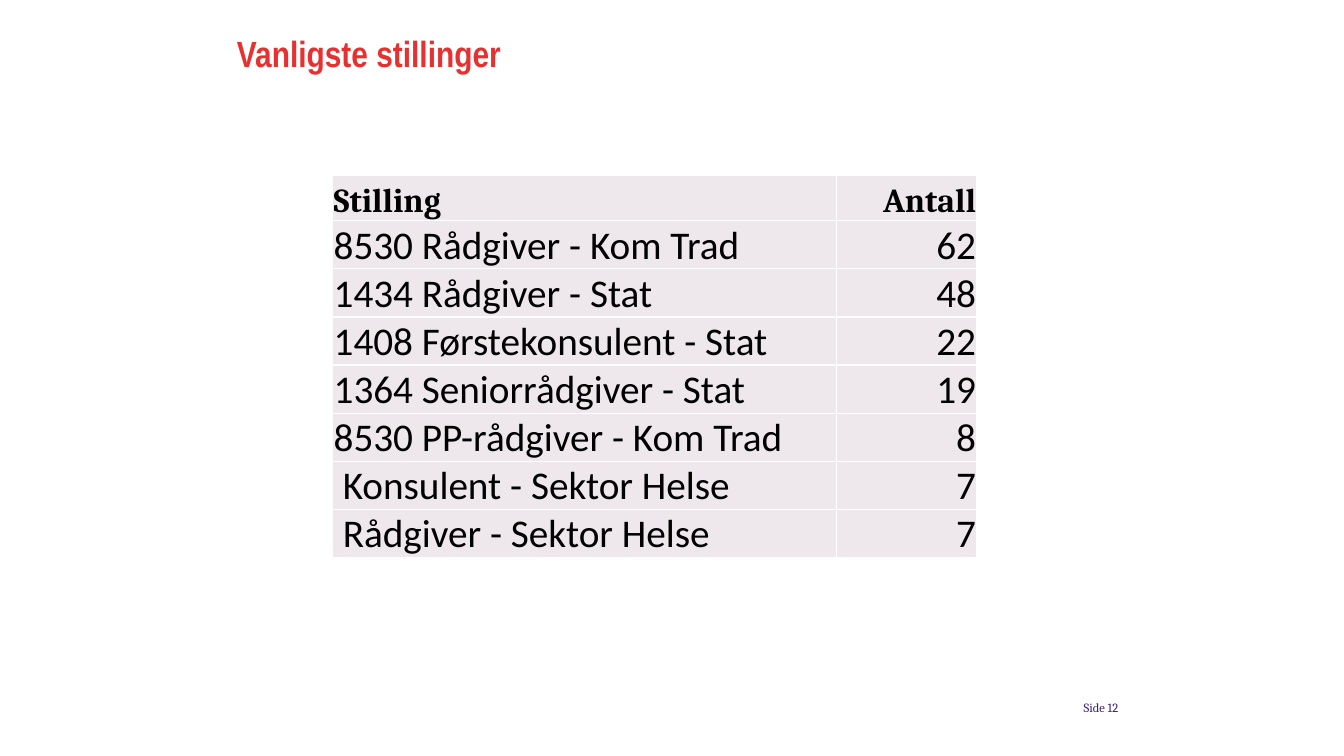
from lxml import etree
from pptx import Presentation
from pptx.dml.color import RGBColor
from pptx.enum.text import MSO_ANCHOR, PP_ALIGN
from pptx.oxml.ns import qn
from pptx.util import Inches, Pt

LEFT, RIGHT = PP_ALIGN.LEFT, PP_ALIGN.RIGHT
TOP, MIDDLE, BOTTOM = MSO_ANCHOR.TOP, MSO_ANCHOR.MIDDLE, MSO_ANCHOR.BOTTOM
BLACK, WHITE, RED, PURPLE, PALE = "000000", "FFFFFF", "E73130", "3F1F71", "EEE8ED"


def style(para, font, size, color, bold=False, align=LEFT):
    para.alignment = align
    for run in para.runs:
        run.font.name = font
        run.font.size = Pt(size)
        run.font.bold = bold
        run.font.color.rgb = RGBColor.from_string(color)


def label(text, left, top, width, height, anchor):
    """Add a text box without margins and return its paragraph."""
    box = slide.shapes.add_textbox(*map(Inches, (left, top, width, height)))
    frame = box.text_frame
    frame.word_wrap = True
    frame.vertical_anchor = anchor
    frame.margin_left = frame.margin_right = 0
    frame.margin_top = frame.margin_bottom = 0
    frame.text = text
    return frame.paragraphs[0]


prs = Presentation()
prs.slide_width, prs.slide_height = Inches(13.33), Inches(7.5)
slide = prs.slides.add_slide(prs.slide_layouts[6])

title = label("Vanligste stillinger", 2.35, 0.34, 6.47, 0.81, TOP)
title.line_spacing = Pt(29)
style(title, "Arial Narrow", 26, RED, bold=True)

# Position, count and left indent in inches
rows = [
    ("Stilling", "Antall", 0.01),
    ("8530 Rådgiver - Kom Trad", "62", 0.01),
    ("1434 Rådgiver - Stat", "48", 0.01),
    ("1408 Førstekonsulent - Stat", "22", 0.01),
    ("1364 Seniorrådgiver - Stat", "19", 0.01),
    ("8530 PP-rådgiver - Kom Trad", "8", 0.01),
    ("Konsulent - Sektor Helse", "7", 0.1),
    ("Rådgiver - Sektor Helse", "7", 0.1),
]
widths = (5, 1.39)
height = 0.45
table = slide.shapes.add_table(
    len(rows), len(widths), Inches(3.3), Inches(1.74),
    Inches(sum(widths)), Inches(height * len(rows))).table
table.horz_banding = False
for col, width in zip(table.columns, widths):
    col.width = Inches(width)

for r, (job, count, indent) in enumerate(rows):
    table.rows[r].height = Inches(height)
    for c, text in enumerate((job, count)):
        cell = table.cell(r, c)
        cell.text = text
        cell.vertical_anchor = BOTTOM
        cell.margin_left = Inches(indent if c == 0 else 0.01)
        cell.margin_right = cell.margin_top = Inches(0.01)
        cell.margin_bottom = 0
        para = cell.text_frame.paragraphs[0]
        align = RIGHT if c else LEFT
        if r == 0:
            style(para, "Cambria", 24, BLACK, bold=True, align=align)
        else:
            style(para, "Calibri", 28, BLACK, align=align)
        # Borders must come before the fill in the cell properties
        props = cell._tc.get_or_add_tcPr()
        for side in ("a:lnL", "a:lnR", "a:lnT", "a:lnB"):
            line = etree.SubElement(props, qn(side), w=str(Pt(1)))
            fill = etree.SubElement(line, qn("a:solidFill"))
            etree.SubElement(fill, qn("a:srgbClr"), val=WHITE)
        cell.fill.solid()
        cell.fill.fore_color.rgb = RGBColor.from_string(PALE)

page = label("Side 12", 8.84, 6.94, 2.25, 0.15, MIDDLE)
style(page, "Cambria", 9, PURPLE, align=RIGHT)

prs.save("out.pptx")
